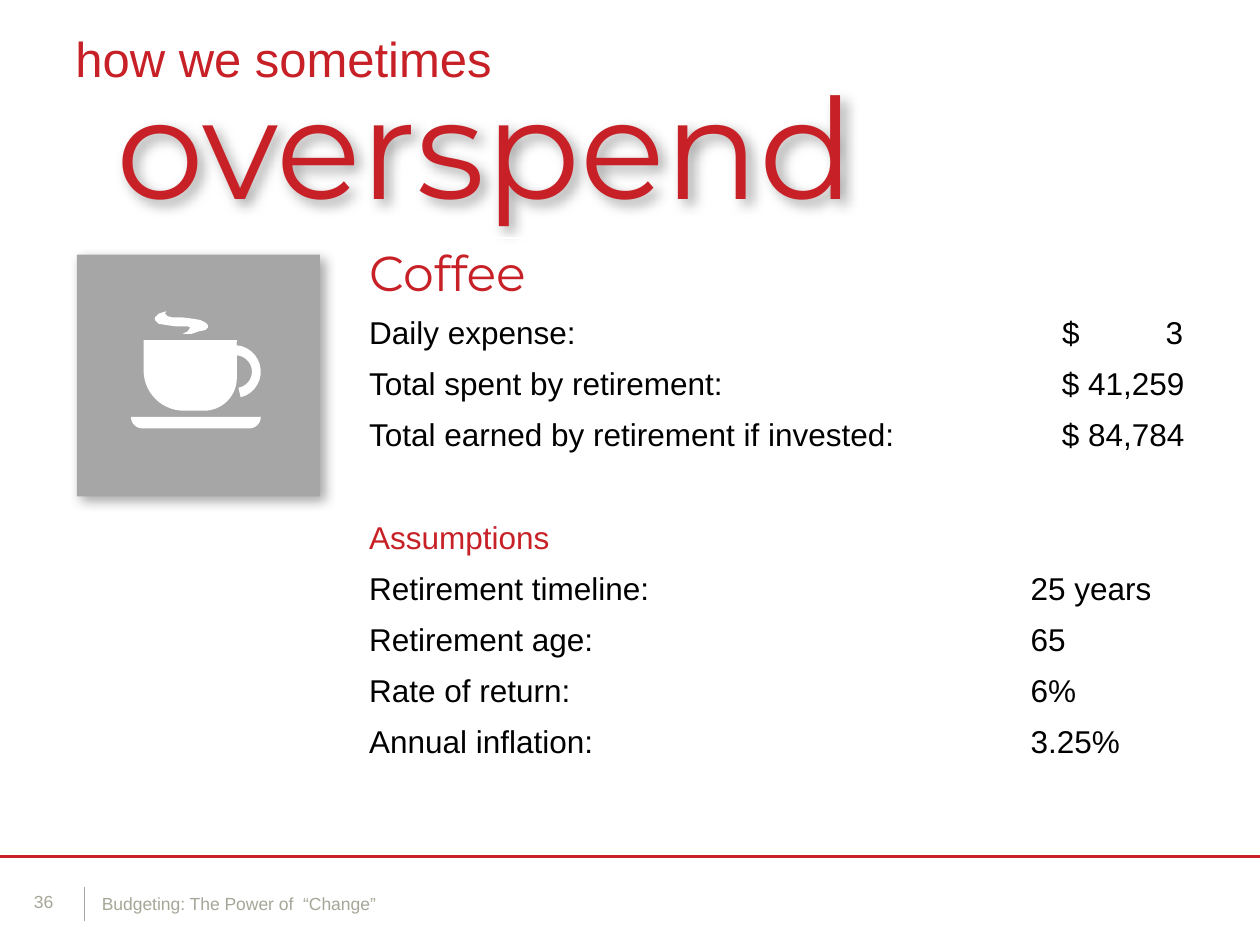
import math

from lxml import etree
from pptx import Presentation
from pptx import util as u
from pptx.dml.color import RGBColor
from pptx.enum import shapes, text
from pptx.oxml import ns

RED, GREY, FOOTER, BLACK, WHITE = "C72127", "A6A6A6", "A6A698", "000000", "FFFFFF"


def rgb(value):
    return RGBColor.from_string(value)


def sub(parent, tag, **attrs):
    return etree.SubElement(parent, ns.qn(tag), {k: str(v) for k, v in attrs.items()})


def arc(cx, cy, r, start, end, steps=14):
    """Points on a circle; angles in degrees, clockwise from the right."""
    angles = (math.radians(start + (end - start) * i / steps) for i in range(steps + 1))
    return [(cx + r * math.cos(a), cy + r * math.sin(a)) for a in angles]


class SlideStyle:
    font = "Arial"
    display = "Montserrat"

    def __init__(self, slide):
        self.s = slide

    def set_font(self, p, size, color, name=None):
        p.font.size = u.Pt(size)
        p.font.name = name or self.font
        p.font.color.rgb = rgb(color)

    def shadow(self, sp):
        effects = sub(sp._element.spPr, "a:effectLst")
        outer = sub(effects, "a:outerShdw", blurRad=u.Pt(7.2), dist=u.Pt(3.8),
                    dir=45 * 60000, algn="tl", rotWithShape=0)
        color = sub(outer, "a:srgbClr", val=BLACK)
        sub(color, "a:alpha", val=35000)

    def text(self, box, words, size, color, name=None):
        sp = self.s.shapes.add_textbox(*map(u.Inches, box))
        tf = sp.text_frame
        tf.word_wrap = True
        tf.text = words
        self.set_font(tf.paragraphs[0], size, color, name)
        return sp

    def line(self, start, end, color, width):
        ends = map(u.Inches, (*start, *end))
        sp = self.s.shapes.add_connector(shapes.MSO_CONNECTOR.STRAIGHT, *ends)
        sp.line.color.rgb = rgb(color)
        sp.line.width = u.Pt(width)
        sub(sp._element.spPr, "a:effectLst")

    def tile(self, box, color):
        sp = self.s.shapes.add_shape(shapes.MSO_SHAPE.RECTANGLE, *map(u.Inches, box))
        sp.fill.solid()
        sp.fill.fore_color.rgb = rgb(color)
        sp.line.fill.background()
        self.shadow(sp)

    def outline(self, contours, color):
        """One filled freeform made of several closed contours."""
        contours = [[(u.Inches(x), u.Inches(y)) for x, y in c] for c in contours]
        fb = self.s.shapes.build_freeform(*contours[0][0])
        for i, points in enumerate(contours):
            if i:
                fb.move_to(*points[0])
            fb.add_line_segments(points[1:], close=True)
        sp = fb.convert_to_shape()
        sp.fill.solid()
        sp.fill.fore_color.rgb = rgb(color)
        sp.line.fill.background()
        sp.shadow.inherit = False

    def cell(self, cell, words, color, size=18, name=None, align=None):
        cell.text = words
        p = cell.text_frame.paragraphs[0]
        p.alignment = align
        if "\t" in words:
            # Dollar sign on the left, amount on a right tab at the cell edge
            p.alignment = text.PP_ALIGN.LEFT
            cell.margin_left = u.Inches(0.35)
            tabs = sub(p._p.get_or_add_pPr(), "a:tabLst")
            sub(tabs, "a:tab", pos=u.Inches(0.96), algn="r")
        self.set_font(p, size, color, name)

    def table(self, box, widths, rows):
        """A row with one text is a heading across all columns."""
        frame = self.s.shapes.add_table(len(rows), len(widths), *map(u.Inches, box))
        table = frame.table
        table.first_row = table.horz_banding = False
        for column, width in zip(table.columns, widths):
            column.width = u.Inches(width)
        for cell in table.iter_cells():
            cell.fill.background()
        for r, row in enumerate(rows):
            if len(row) == 1:
                table.cell(r, 0).merge(table.cell(r, len(widths) - 1))
                big = r == 0
                self.cell(table.cell(r, 0), row[0], RED, 28 if big else 18,
                          self.display if big else None)
                continue
            for c, words in enumerate(row):
                money = words.startswith("$")
                self.cell(table.cell(r, c), words, BLACK,
                          align=text.PP_ALIGN.RIGHT if money else None)


ROWS = [
    ("Coffee",),
    ("Daily expense:", "$\t3"),
    ("Total spent by retirement:", "$ 41,259"),
    ("Total earned by retirement if invested:", "$ 84,784"),
    ("",),
    ("Assumptions",),
    ("Retirement timeline:", "25 years"),
    ("Retirement age:", "65"),
    ("Rate of return:", "6%"),
    ("Annual inflation:", "3.25%"),
]

SAUCER = arc(1.98, 3.31, 0.09, 0, 90) + arc(1.13, 3.31, 0.09, 90, 180)
HANDLE = arc(1.86, 2.95, 0.21, -85, 76) + arc(1.87, 2.95, 0.13, 80, -85)
BOWL = arc(1.62, 3, 0.26, 0, 90) + arc(1.46, 2.94, 0.32, 90, 180)
CUP = [(1.14, 2.7), (1.88, 2.7)] + HANDLE + BOWL
STEAM = [
    (1.32, 2.47), (1.31, 2.49), (1.33, 2.51), (1.37, 2.52), (1.45, 2.52),
    (1.53, 2.53), (1.59, 2.54), (1.63, 2.56), (1.65, 2.58), (1.65, 2.6),
    (1.63, 2.62), (1.58, 2.63), (1.52, 2.65), (1.45, 2.65), (1.49, 2.63),
    (1.51, 2.6), (1.49, 2.59), (1.39, 2.59), (1.32, 2.58), (1.26, 2.57),
    (1.23, 2.54), (1.23, 2.52), (1.26, 2.49), (1.29, 2.48),
]


def main():
    prs = Presentation()
    prs.slide_width, prs.slide_height = u.Inches(10), u.Inches(7.5)
    page = SlideStyle(prs.slides.add_slide(prs.slide_layouts[6]))

    page.line((0.67, 7.04), (0.67, 7.31), GREY, 0.25)
    page.text((0.17, 7.02, 0.39, 0.27), "36", 10, FOOTER)
    page.text((0.71, 7.04, 4.24, 0.27), "Budgeting: The Power of  “Change”", 10, FOOTER)
    page.line((0, 6.8), (10, 6.8), RED, 1.5)

    title = page.text((0.83, 0.42, 6.91, 1.45), "overspend", 80, RED, page.display)
    page.shadow(title)
    page.text((0.5, 0.18, 6.25, 0.57), "how we sometimes", 28, RED)

    page.table((2.83, 1.89, 6.67, 4.06), (5.25, 1.42), ROWS)
    page.tile((0.61, 2.02, 1.93, 1.92), GREY)
    page.outline((SAUCER, CUP, STEAM), WHITE)

    prs.save("out.pptx")


if __name__ == "__main__":
    main()
